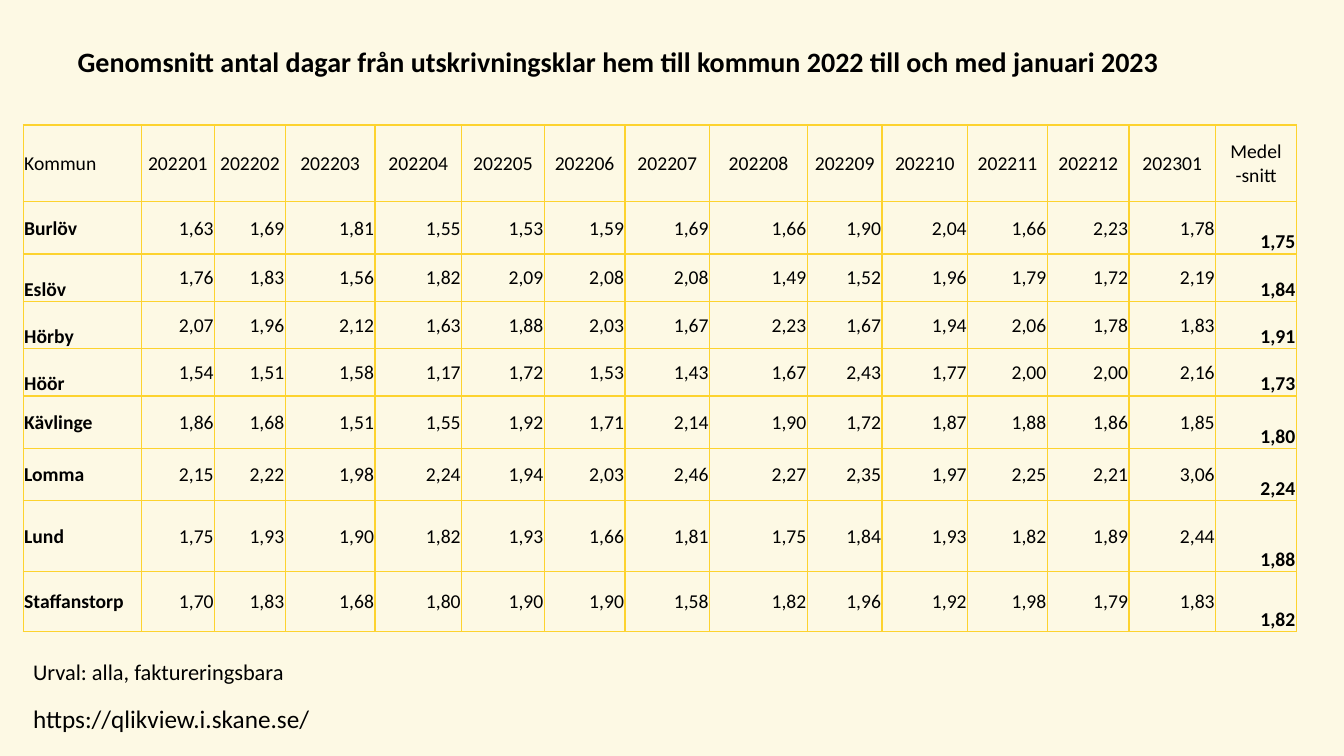
from lxml.etree import SubElement
from pptx import Presentation
from pptx.dml.color import RGBColor
from pptx.enum.text import MSO_ANCHOR, PP_ALIGN
from pptx.oxml.ns import qn
from pptx.util import Inches, Pt

HUES = {"back": "FDF9E4", "text": "000000", "line": "FDD32F"}
FONT = "Calibri"
LEFT = 0.23

COLS = [1.17, 0.73, 0.7, 0.89, 0.86, 0.82, 0.8, 0.84,
        0.97, 0.74, 0.85, 0.79, 0.81, 0.86, 0.8]
ROWS = [0.76, 0.52, 0.47, 0.47, 0.47, 0.52, 0.52, 0.7, 0.6]
MONTHS = [f"2022{month:02}" for month in range(1, 13)] + ["202301"]
DAYS = {
    "Burlöv": "1,63 1,69 1,81 1,55 1,53 1,59 1,69 1,66 1,90 2,04 1,66 2,23 1,78 1,75",
    "Eslöv": "1,76 1,83 1,56 1,82 2,09 2,08 2,08 1,49 1,52 1,96 1,79 1,72 2,19 1,84",
    "Hörby": "2,07 1,96 2,12 1,63 1,88 2,03 1,67 2,23 1,67 1,94 2,06 1,78 1,83 1,91",
    "Höör": "1,54 1,51 1,58 1,17 1,72 1,53 1,43 1,67 2,43 1,77 2,00 2,00 2,16 1,73",
    "Kävlinge": "1,86 1,68 1,51 1,55 1,92 1,71 2,14 1,90 1,72 1,87 1,88 1,86 1,85 1,80",
    "Lomma": "2,15 2,22 1,98 2,24 1,94 2,03 2,46 2,27 2,35 1,97 2,25 2,21 3,06 2,24",
    "Lund": "1,75 1,93 1,90 1,82 1,93 1,66 1,81 1,75 1,84 1,93 1,82 1,89 2,44 1,88",
    "Staffanstorp": "1,70 1,83 1,68 1,80 1,90 1,90 1,58 1,82 1,96 1,92 1,98 1,79 1,83 1,82",
}
LOW = {"Eslöv", "Hörby", "Höör"}  # names set at the foot of the row


def write(frame, text, size, bold=False, align=PP_ALIGN.LEFT):
    frame.text = text
    for para in frame.paragraphs:
        para.alignment = align
        for run in para.runs:
            font = run.font
            font.name, font.size, font.bold = FONT, Pt(size), bold
            font.color.rgb = RGBColor.from_string(HUES["text"])


def add_title(slide, box, text):
    title = slide.shapes.title
    title.left, title.top, title.width, title.height = map(Inches, box)
    write(title.text_frame, text, 20, bold=True)
    title.text_frame.vertical_anchor = MSO_ANCHOR.TOP


def add_note(slide, box, text, size):
    frame = slide.shapes.add_textbox(*map(Inches, box)).text_frame
    frame.word_wrap = True
    write(frame, text, size)


def add_edges(cell):
    """Draw a thin line on all four sides of the cell."""
    props = cell._tc.get_or_add_tcPr()
    for spot, side in enumerate(("a:lnL", "a:lnR", "a:lnT", "a:lnB")):
        line = SubElement(props, qn(side), w=str(Pt(1)))
        fill = SubElement(line, qn("a:solidFill"))
        SubElement(fill, qn("a:srgbClr"), val=HUES["line"])
        props.insert(spot, line)


def add_grid(slide, box):
    data = [["Kommun", *MONTHS, "Medel\n-snitt"]]
    data += [[name, *days.split()] for name, days in DAYS.items()]
    table = slide.shapes.add_table(len(ROWS), len(COLS), *map(Inches, box)).table
    table.first_row = table.horz_banding = False
    for col, width in zip(table.columns, COLS):
        col.width = Inches(width)
    for row, height in zip(table.rows, ROWS):
        row.height = Inches(height)
    last = len(COLS) - 1
    for r, texts in enumerate(data):
        for c, text in enumerate(texts):
            cell = table.cell(r, c)
            cell.margin_left = cell.margin_right = cell.margin_top = Inches(0.01)
            cell.margin_bottom = 0
            low = r > 0 and c == last or text in LOW
            cell.vertical_anchor = MSO_ANCHOR.BOTTOM if low else MSO_ANCHOR.MIDDLE
            if c == 0:
                align = PP_ALIGN.LEFT
            else:
                align = PP_ALIGN.RIGHT if r else PP_ALIGN.CENTER
            write(cell.text_frame, text, 14, r > 0 and c in (0, last), align)
            cell.fill.background()
            add_edges(cell)


def main():
    deck = Presentation()
    deck.slide_width, deck.slide_height = Inches(13.33), Inches(7.5)
    slide = deck.slides.add_slide(deck.slide_layouts[5])
    back = slide.background.fill
    back.solid()
    back.fore_color.rgb = RGBColor.from_string(HUES["back"])
    add_title(slide, (0.67, 0.39, 12, 1.25),
              "Genomsnitt antal dagar från utskrivningsklar hem till kommun "
              "2022 till och med januari 2023")
    add_grid(slide, (LEFT, 1.24, sum(COLS), sum(ROWS)))
    add_note(slide, (LEFT, 6.48, 3.29, 0.37), "Urval: alla, faktureringsbara", 16)
    add_note(slide, (LEFT, 6.93, 3.54, 0.4), "https://qlikview.i.skane.se/", 18)
    deck.save("out.pptx")


if __name__ == "__main__":
    main()
